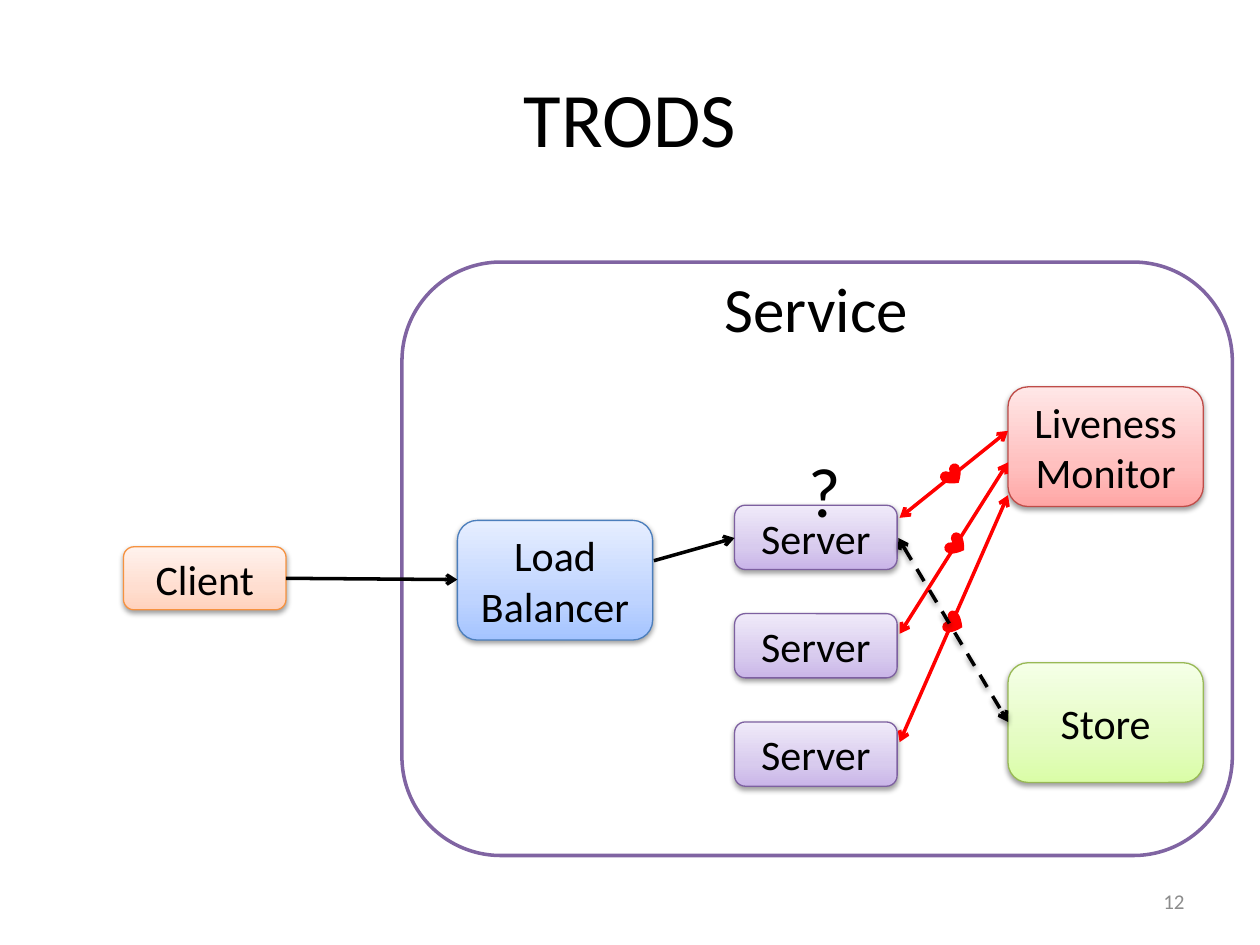
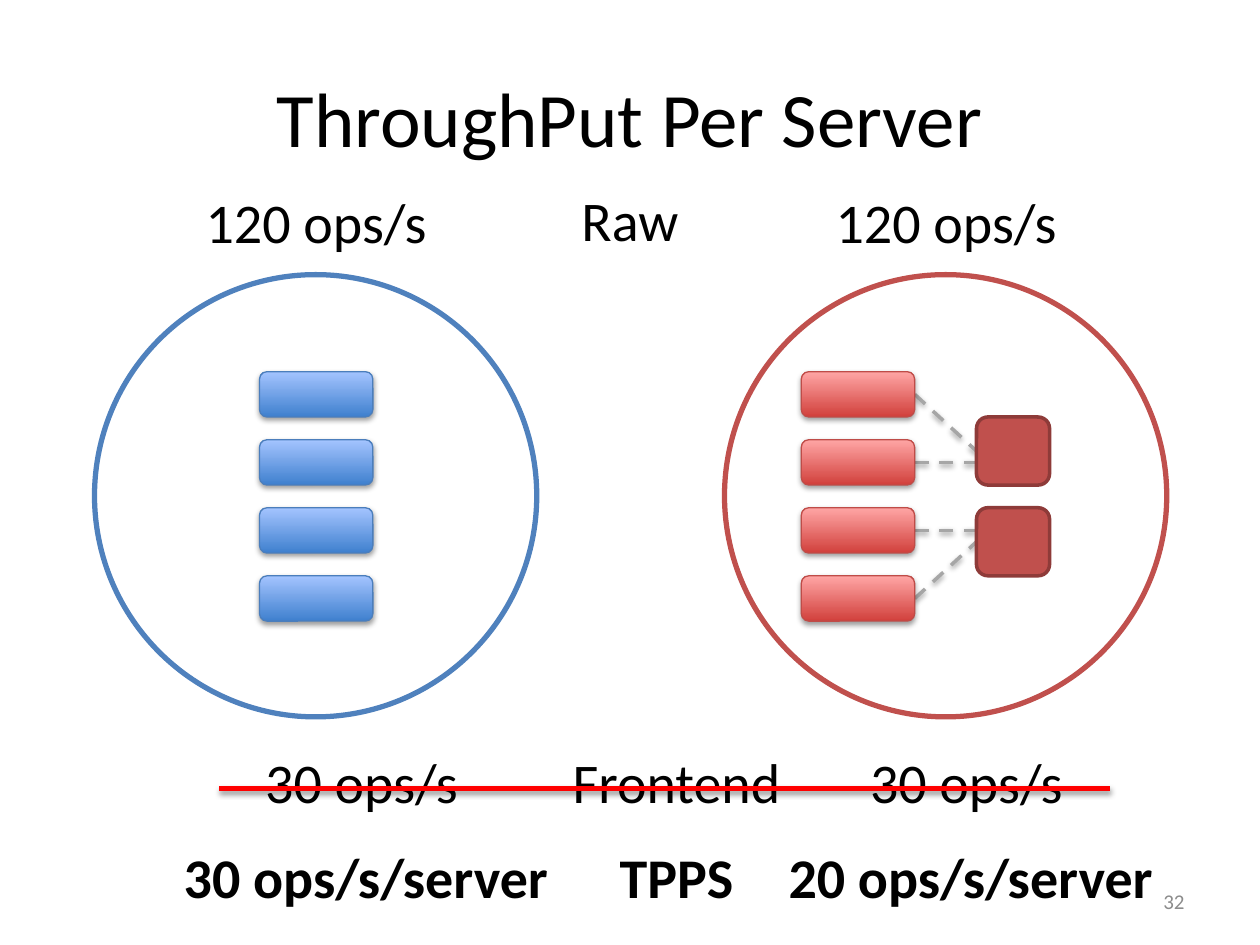
"""Build two slides: the TRODS service architecture and throughput per server."""
from lxml import etree
from pptx import Presentation
from pptx.dml.color import RGBColor
from pptx.enum.dml import MSO_LINE
from pptx.enum.shapes import MSO_CONNECTOR, MSO_SHAPE
from pptx.enum.text import MSO_ANCHOR, PP_ALIGN
from pptx.oxml import parse_xml
from pptx.oxml.ns import nsdecls, qn
from pptx.util import Inches, Pt

ROUNDED, ELLIPSE, HEART = MSO_SHAPE.ROUNDED_RECTANGLE, MSO_SHAPE.OVAL, MSO_SHAPE.HEART
STRAIGHT, DASH = MSO_CONNECTOR.STRAIGHT, MSO_LINE.DASH
TOP, MIDDLE = MSO_ANCHOR.TOP, MSO_ANCHOR.MIDDLE
CENTER, RIGHT = PP_ALIGN.CENTER, PP_ALIGN.RIGHT

FONT = "Calibri"
BLACK = RGBColor(0x00, 0x00, 0x00)
WHITE = RGBColor(0xFF, 0xFF, 0xFF)
RED = RGBColor(0xFF, 0x00, 0x00)
GRAY = RGBColor(0xA6, 0xA6, 0xA6)
PAGE_GRAY = RGBColor(0x8C, 0x8C, 0x8C)
FRAME_PURPLE = RGBColor(0x80, 0x64, 0xA2)
RING_BLUE = RGBColor(0x4F, 0x81, 0xBD)
RING_RED = RGBColor(0xC0, 0x50, 0x4D)
STORE_EDGE = RGBColor(0x8E, 0x3B, 0x39)
ORANGE_EDGE = RGBColor(0xF6, 0x92, 0x40)
PURPLE_EDGE = RGBColor(0x7D, 0x60, 0xA0)
RED_EDGE = RGBColor(0xBF, 0x4C, 0x48)
BLUE_EDGE = RGBColor(0x4B, 0x7E, 0xBC)
GREEN_EDGE = RGBColor(0x98, 0xB9, 0x55)

ORANGE_FADE = [(0, "FFD2BD"), (35, "FFDED0"), (100, "FFF2ED")]
PURPLE_FADE = [(0, "C9B5E8"), (35, "D8CBEE"), (100, "F0EAF9")]
RED_FADE = [(0, "FFA6A5"), (35, "FFC0BF"), (100, "FFE7E7")]
BLUE_FADE = [(0, "A4C4FF"), (35, "BFD4FF"), (100, "E6EEFF")]
GREEN_FADE = [(0, "DAFDA7"), (35, "E4FCC2"), (100, "F5FFE7")]
STRONG_BLUE_FADE = [(0, "3F80CE"), (100, "A4C4FF")]
STRONG_RED_FADE = [(0, "D1403C"), (100, "FFA6A5")]

SHADOW = (
    f'<a:outerShdw {nsdecls("a")} blurRad="40000" dist="20000" dir="5400000" rotWithShape="0">'
    '<a:srgbClr val="000000"><a:alpha val="38000"/></a:srgbClr></a:outerShdw>'
)


def add_item(slide, at, text="", size=24, kind=None, fill=None, edge=None, width=0.75,
             color=BLACK, bold=False, align=CENTER, anchor=MIDDLE):
    """Add a text box, or a preset shape when a kind is given; a list as fill is a gradient."""
    place = [Inches(value) for value in at]
    if kind is None:
        item = slide.shapes.add_textbox(*place)
    else:
        item = slide.shapes.add_shape(kind, *place)
        item.shadow.inherit = False
        properties = item._element.spPr
        if isinstance(fill, list):
            item.fill.gradient()
            item.fill.gradient_angle = 90
            stops = properties.find(qn("a:gradFill")).find(qn("a:gsLst"))
            stops[:] = []
            for percent, shade in fill:
                stop = etree.SubElement(stops, qn("a:gs"), pos=str(percent * 1000))
                etree.SubElement(stop, qn("a:srgbClr"), val=shade)
            properties.find(qn("a:effectLst")).append(parse_xml(SHADOW))
        elif fill is None:
            item.fill.background()
        else:
            item.fill.solid()
            item.fill.fore_color.rgb = fill
        if edge is None:
            item.line.fill.background()
        else:
            item.line.color.rgb = edge
            item.line.width = Pt(width)
    if text:
        frame = item.text_frame
        frame.word_wrap = anchor == MIDDLE
        frame.vertical_anchor = anchor
        paragraph = frame.paragraphs[0]
        paragraph.alignment = align
        run = paragraph.add_run()
        run.text = text
        run.font.name = FONT
        run.font.size = Pt(size)
        run.font.bold = bold
        run.font.color.rgb = color
    return item


def add_link(slide, start, end, color=BLACK, width=2, dashed=False, arrows=(), shadow=False):
    """Add a straight line with open arrowheads at the named ends."""
    link = slide.shapes.add_connector(STRAIGHT, *[Inches(value) for value in (*start, *end)])
    link.line.color.rgb = color
    link.line.width = Pt(width)
    if dashed:
        link.line.dash_style = DASH
    for arrow in arrows:
        etree.SubElement(link.line._get_or_add_ln(), qn(f"a:{arrow}"), type="arrow")
    effects = etree.SubElement(link._element.spPr, qn("a:effectLst"))
    if shadow:
        effects.append(parse_xml(SHADOW))


prs = Presentation()
prs.slide_width, prs.slide_height = Inches(10), Inches(7.5)

slides = []
for title, page in [("TRODS", "12"), ("ThroughPut Per Server", "32")]:
    slide = prs.slides.add_slide(prs.slide_layouts[6])
    add_item(slide, (0.5, 0.3, 9, 1.25), title, 44)
    add_item(slide, (7.17, 6.95, 2.33, 0.4), page, 12, color=PAGE_GRAY, align=RIGHT)
    slides.append(slide)
architecture, throughput = slides

BOTH_ENDS = ("headEnd", "tailEnd")
add_item(architecture, (3.19, 2.08, 6.59, 4.71), kind=ROUNDED, edge=FRAME_PURPLE, width=2)
add_item(architecture, (5.65, 2.09, 1.66, 0.71), "Service", 36, anchor=TOP)

components = [
    ("Client", (0.98, 4.34, 1.29, 0.5), ORANGE_FADE, ORANGE_EDGE),
    ("Load Balancer", (3.63, 4.13, 1.55, 0.95), BLUE_FADE, BLUE_EDGE),
    ("Liveness Monitor", (8, 3.07, 1.55, 0.95), RED_FADE, RED_EDGE),
    ("Store", (8, 5.26, 1.55, 0.95), GREEN_FADE, GREEN_EDGE),
]
for row in range(3):
    components.append(("Server", (5.83, 4.01 + 0.86 * row, 1.29, 0.51), PURPLE_FADE, PURPLE_EDGE))
for label, at, fade, edge in components:
    add_item(architecture, at, label, kind=ROUNDED, fill=fade, edge=edge)

heartbeats = [
    (4.11, 3.42, (7.47, 3.7), 319.2),
    (5.03, 3.67, (7.5, 4.25), 303.1),
    (5.89, 3.93, (7.48, 4.87), 295.9),
]
for server_y, monitor_y, heart_at, angle in heartbeats:
    add_link(architecture, (7.14, server_y), (8, monitor_y), RED, arrows=BOTH_ENDS)
    heart = add_item(architecture, (*heart_at, 0.18, 0.15), kind=HEART, fill=RED)
    heart.rotation = angle

add_link(architecture, (2.27, 4.59), (3.63, 4.6), arrows=("tailEnd",))
add_link(architecture, (5.19, 4.45), (5.83, 4.27), arrows=("tailEnd",))
add_item(architecture, (6.24, 3.5, 0.61, 0.77), "?", 40, anchor=TOP)
add_link(architecture, (7.13, 4.27), (8, 5.73), dashed=True, arrows=BOTH_ENDS, shadow=True)

for ring_x, ring_color in [(0.75, RING_BLUE), (5.75, RING_RED)]:
    add_item(throughput, (ring_x, 2.18, 3.51, 3.51), kind=ELLIPSE, fill=WHITE,
             edge=ring_color, width=3)

for row, store_y in enumerate([3.58, 3.67, 4.21, 4.3]):
    server_y = 2.95 + 0.54 * row
    add_link(throughput, (7.26, server_y + 0.18), (7.75, store_y), GRAY, dashed=True, shadow=True)
    for server_x, fade, edge in [(2.06, STRONG_BLUE_FADE, BLUE_EDGE),
                                 (6.36, STRONG_RED_FADE, RED_EDGE)]:
        add_item(throughput, (server_x, server_y, 0.9, 0.36), kind=ROUNDED, fill=fade, edge=edge)

for store_y in (3.31, 4.03):
    add_item(throughput, (7.75, store_y, 0.58, 0.54), kind=ROUNDED, fill=RING_RED,
             edge=STORE_EDGE, width=2)

measures = [
    ("120 ops/s", 1.38, 1.44, 2.26, False),
    ("Raw", 4.06, 1.42, 1.88, False),
    ("120 ops/s", 6.38, 1.44, 2.26, False),
    ("30 ops/s", 1.74, 5.88, 2.26, False),
    ("Frontend", 4.43, 5.88, 1.88, False),
    ("30 ops/s", 6.54, 5.88, 2.26, False),
    ("30 ops/s/server", 1.35, 6.64, 3.11, True),
    ("TPPS", 4.43, 6.64, 1.88, True),
    ("20 ops/s/server", 6.15, 6.64, 3.11, True),
]
for label, x, y, width, bold in measures:
    add_item(throughput, (x, y, width, 0.64), label, 32, bold=bold, anchor=TOP)

add_link(throughput, (1.74, 6.26), (8.81, 6.26), RED, width=3, shadow=True)

prs.save("out.pptx")
